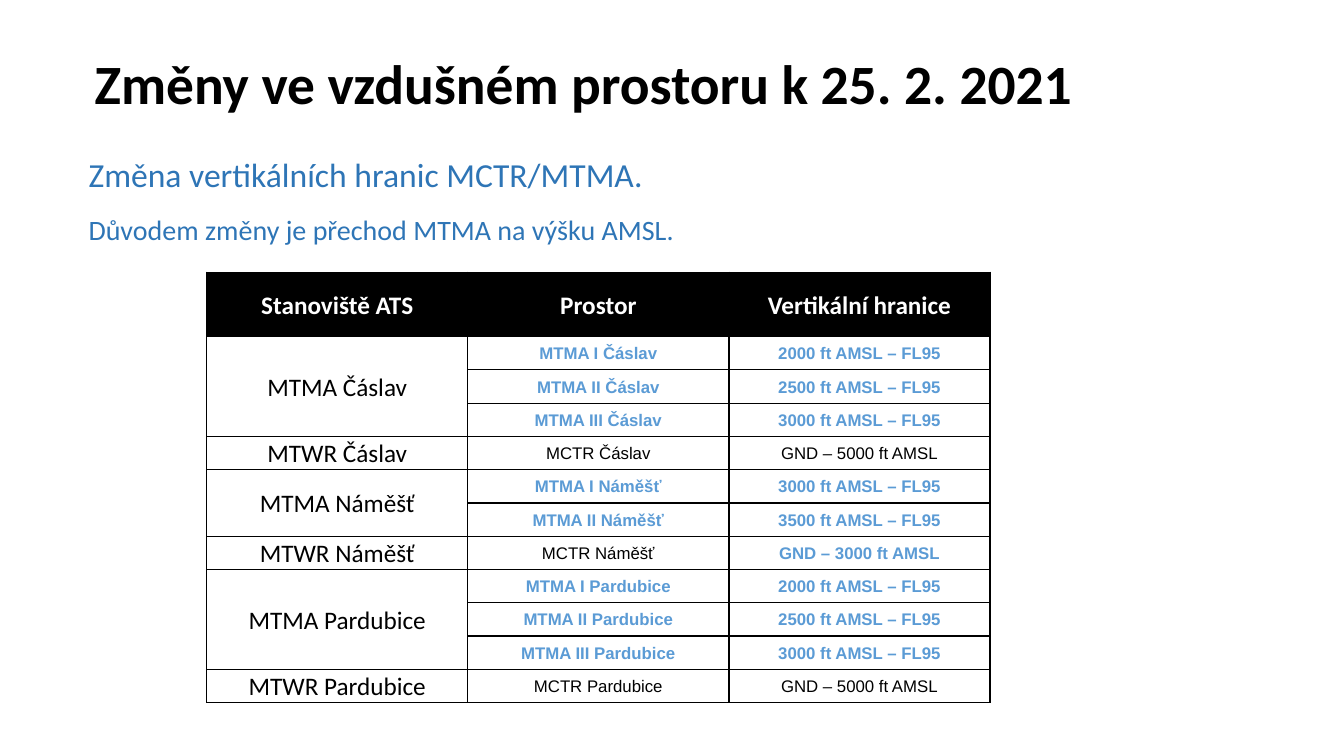
from lxml import etree
from pptx import Presentation
from pptx.dml.color import RGBColor
from pptx.enum import text
from pptx.oxml import ns
from pptx.util import Inches, Pt

BLACK = RGBColor(0x00, 0x00, 0x00)
WHITE = RGBColor(0xFF, 0xFF, 0xFF)
TEXT_BLUE = RGBColor(0x2E, 0x75, 0xB6)
CHANGED_BLUE = RGBColor(0x5B, 0x9B, 0xD5)

HEADERS = ["Stanoviště ATS", "Prostor", "Vertikální hranice"]
# Each station lists its airspaces: (name, limits, name changed, limits changed)
STATIONS = [
    ("MTMA Čáslav", [
        ("MTMA I Čáslav", "2000 ft AMSL – FL95", True, True),
        ("MTMA II Čáslav", "2500 ft AMSL – FL95", True, True),
        ("MTMA III Čáslav", "3000 ft AMSL – FL95", True, True)]),
    ("MTWR Čáslav", [("MCTR Čáslav", "GND – 5000 ft AMSL", False, False)]),
    ("MTMA Náměšť", [
        ("MTMA I Náměšť", "3000 ft AMSL – FL95", True, True),
        ("MTMA II Náměšť", "3500 ft AMSL – FL95", True, True)]),
    ("MTWR Náměšť", [("MCTR Náměšť", "GND – 3000 ft AMSL", False, True)]),
    ("MTMA Pardubice", [
        ("MTMA I Pardubice", "2000 ft AMSL – FL95", True, True),
        ("MTMA II Pardubice", "2500 ft AMSL – FL95", True, True),
        ("MTMA III Pardubice", "3000 ft AMSL – FL95", True, True)]),
    ("MTWR Pardubice", [("MCTR Pardubice", "GND – 5000 ft AMSL", False, False)]),
]
HEADER_HEIGHT = 0.64
ROW_HEIGHT = 0.33


def format_run(paragraph, size, color, bold=False, name="Calibri"):
    font = paragraph.runs[0].font
    font.name, font.size, font.bold = name, Pt(size), bold
    font.color.rgb = color


def add_line_of_text(slide, box, content, size, color, bold=False, wrap=False):
    shape = slide.shapes.add_textbox(*map(Inches, box))
    frame = shape.text_frame
    frame.word_wrap = wrap
    frame.text = content
    format_run(frame.paragraphs[0], size, color, bold)
    return frame


def add_title(slide, box, content):
    frame = add_line_of_text(slide, box, content, 39.6, BLACK, True, True)
    frame.vertical_anchor = text.MSO_ANCHOR.MIDDLE
    frame.paragraphs[0].line_spacing = 0.9


def style_cell(cell, fill=None):
    """Give a cell its margins, black borders and optional fill."""
    cell.margin_left = cell.margin_right = Inches(0.07)
    cell.margin_top = cell.margin_bottom = 0
    cell.vertical_anchor = text.MSO_ANCHOR.MIDDLE
    properties = cell._tc.get_or_add_tcPr()
    for side in ("a:lnL", "a:lnR", "a:lnT", "a:lnB"):
        line = etree.SubElement(properties, ns.qn(side), w=str(Pt(1)))
        solid = etree.SubElement(line, ns.qn("a:solidFill"))
        etree.SubElement(solid, ns.qn("a:srgbClr"), val=str(BLACK))
    if fill is None:
        cell.fill.background()
    else:
        cell.fill.solid()
        cell.fill.fore_color.rgb = fill


def write_cell(cell, content, size, color, bold=False, name="Calibri"):
    cell.text_frame.text = content
    paragraph = cell.text_frame.paragraphs[0]
    paragraph.alignment = text.PP_ALIGN.CENTER
    paragraph.line_spacing = 1.07
    format_run(paragraph, size, color, bold, name)


def add_airspace_table(slide, left, top, width):
    row_count = sum(len(airspaces) for _, airspaces in STATIONS)
    height = HEADER_HEIGHT + row_count * ROW_HEIGHT
    table = slide.shapes.add_table(row_count + 1, len(HEADERS), Inches(left),
                                   Inches(top), Inches(width), Inches(height)).table
    table.first_row = table.horz_banding = False
    for index, row in enumerate(table.rows):
        row.height = Inches(ROW_HEIGHT if index else HEADER_HEIGHT)
        for cell in row.cells:
            style_cell(cell, None if index else BLACK)

    # Header
    for column, header in enumerate(HEADERS):
        write_cell(table.cell(0, column), header, 18, WHITE, True)

    # Stations span the rows of their airspaces
    first = 1
    for station, airspaces in STATIONS:
        last = first + len(airspaces) - 1
        if last > first:
            table.cell(first, 0).merge(table.cell(last, 0))
        write_cell(table.cell(first, 0), station, 18, BLACK)
        for row, (space, limits, *changes) in enumerate(airspaces, first):
            for column, content in enumerate((space, limits), 1):
                changed = changes[column - 1]
                color = CHANGED_BLUE if changed else BLACK
                write_cell(table.cell(row, column), content, 12, color, changed, "Arial")
        first = last + 1


def main():
    presentation = Presentation()
    presentation.slide_width = Inches(13.33)
    presentation.slide_height = Inches(7.5)
    slide = presentation.slides.add_slide(presentation.slide_layouts[6])

    add_airspace_table(slide, 2.05, 2.7, 7.77)
    add_title(slide, (0.84, 0.36, 10.2, 0.99), "Změny ve vzdušném prostoru k 25. 2. 2021")
    add_line_of_text(slide, (0.78, 1.48, 5.74, 0.5),
                     "Změna vertikálních hranic MCTR/MTMA.", 24, TEXT_BLUE)
    add_line_of_text(slide, (0.78, 2.06, 6.06, 0.44),
                     "Důvodem změny je přechod MTMA na výšku AMSL.", 20, TEXT_BLUE)
    presentation.save("out.pptx")


if __name__ == "__main__":
    main()
